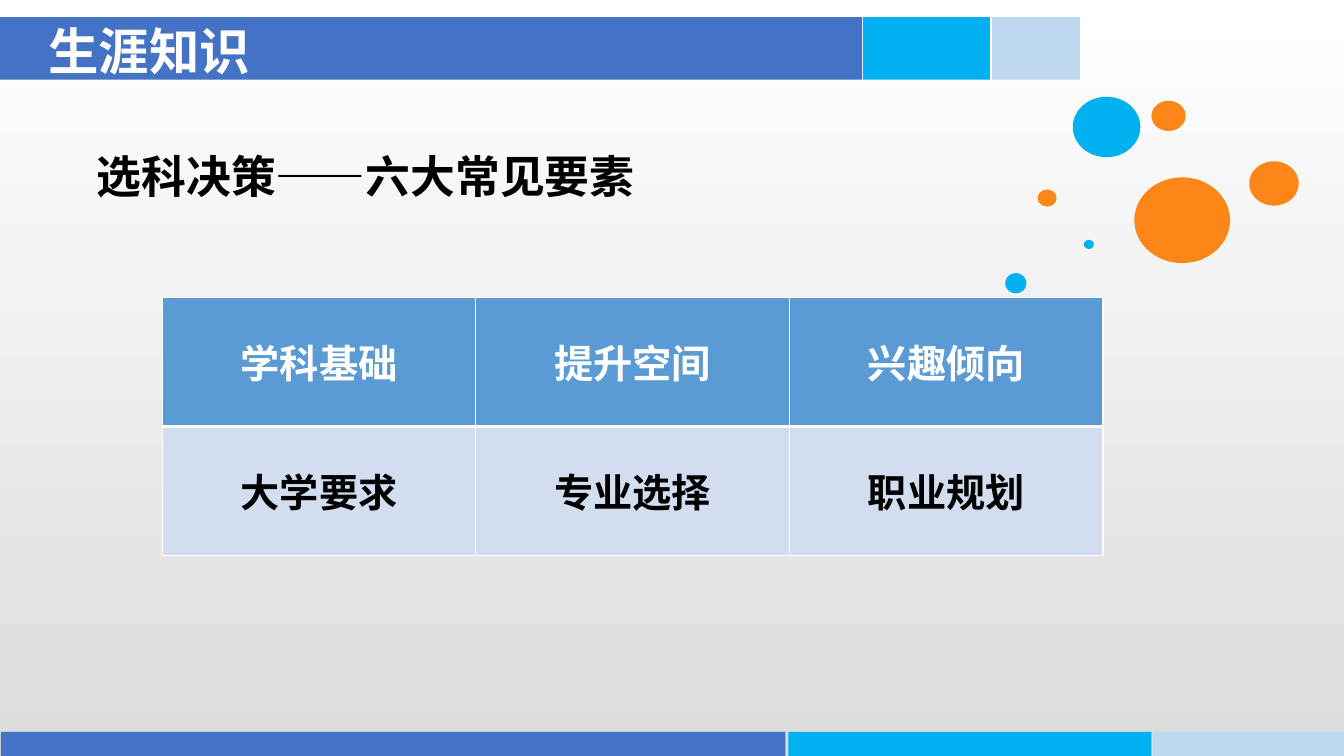
from lxml.etree import SubElement as Sub
from pptx import Presentation
from pptx.dml.color import RGBColor as Rgb
from pptx.enum.shapes import MSO_SHAPE as Kind
from pptx.enum.text import MSO_ANCHOR as Anchor, PP_ALIGN as Align
from pptx.oxml.ns import qn
from pptx.util import Inches, Pt

HUES = {
    "blue": "4472C4", "cyan": "00B0F0", "pale": "BDD7EE", "orange": "FC8618",
    "head": "5B9BD5", "body": "D2DEEF", "white": "FFFFFF", "black": "000000",
    "gray": "DCDCDC",
}
SANS = "Noto Sans CJK SC"
BANDS = [
    (0.17, 0.62, [(0, 8.55, "blue"), (8.56, 1.26, "cyan"), (9.84, 0.87, "pale")]),
    (7.26, 0.24, [(0.01, 7.78, "blue"), (7.82, 3.6, "cyan"), (11.44, 1.89, "pale")]),
]
DOTS = [
    (9.97, 2.71, 0.21, 0.2, "cyan"),
    (11.25, 1.76, 0.95, 0.85, "orange"),
    (10.64, 0.96, 0.67, 0.6, "cyan"),
    (12.39, 1.6, 0.49, 0.44, "orange"),
    (11.42, 1, 0.34, 0.3, "orange"),
    (10.29, 1.88, 0.19, 0.17, "orange"),
    (10.75, 2.38, 0.1, 0.09, "cyan"),
]
TITLES = [
    ("生涯知识", (0.38, 0.24, 3.88, 0.51), 36, "white", Anchor.MIDDLE),
    ("选科决策——六大常见要素", (0.86, 1.38, 6.74, 0.68), 32, "black", Anchor.BOTTOM),
]
ROWS = [
    (["学科基础", "提升空间", "兴趣倾向"], "head", "white", (1, 1, 1, 3)),
    (["大学要求", "专业选择", "职业规划"], "body", "black", (1, 1, 3, 1)),
]
GRID = (1.61, 2.95, 9.33, 2.56)


def tint(name):
    return Rgb.from_string(HUES[name])


def style(para, size, hue, face):
    font = para.font
    font.name, font.size, font.bold = face, Pt(size), True
    font.color.rgb = tint(hue)
    props = para._p.pPr.find(qn("a:defRPr"))
    Sub(props, qn("a:ea")).set("typeface", SANS)


def draw(slide, kind, box, hue):
    shape = slide.shapes.add_shape(kind, *map(Inches, box))
    shape.shadow.inherit = False
    shape.fill.solid()
    shape.fill.fore_color.rgb = tint(hue)
    shape.line.fill.background()


def edge(cell, sizes):
    props = cell._tc.get_or_add_tcPr()
    for spot, (side, size) in enumerate(zip("LRTB", sizes)):
        line = Sub(props, qn("a:ln" + side), w=str(Pt(size)))
        fill = Sub(line, qn("a:solidFill"))
        Sub(fill, qn("a:srgbClr"), val=HUES["white"])
        props.insert(spot, line)


def main():
    deck = Presentation()
    deck.slide_width, deck.slide_height = Inches(13.33), Inches(7.5)
    slide = deck.slides.add_slide(deck.slide_layouts[6])
    back = slide.background.fill
    back.gradient()
    back.gradient_angle = 270
    for stop, pos, hue in zip(back.gradient_stops, (0, 1), ("white", "gray")):
        stop.position, stop.color.rgb = pos, tint(hue)

    for top, high, parts in BANDS:
        for left, wide, hue in parts:
            draw(slide, Kind.RECTANGLE, (left, top, wide, high), hue)
    for *box, hue in DOTS:
        draw(slide, Kind.OVAL, box, hue)

    for text, box, size, hue, anchor in TITLES:
        frame = slide.shapes.add_textbox(*map(Inches, box)).text_frame
        frame.word_wrap = True
        frame.vertical_anchor = anchor
        frame.text = text
        style(frame.paragraphs[0], size, hue, SANS)

    count = len(ROWS[0][0])
    table = slide.shapes.add_table(len(ROWS), count, *map(Inches, GRID)).table
    for r, (words, fill, hue, sizes) in enumerate(ROWS):
        table.rows[r].height = Inches(GRID[3] / len(ROWS))
        for c, word in enumerate(words):
            cell = table.cell(r, c)
            cell.text = word
            cell.vertical_anchor = Anchor.MIDDLE
            cell.fill.solid()
            cell.fill.fore_color.rgb = tint(fill)
            edge(cell, sizes)
            para = cell.text_frame.paragraphs[0]
            para.alignment = Align.CENTER
            style(para, 28, hue, "Arial")

    deck.save("out.pptx")


if __name__ == "__main__":
    main()
